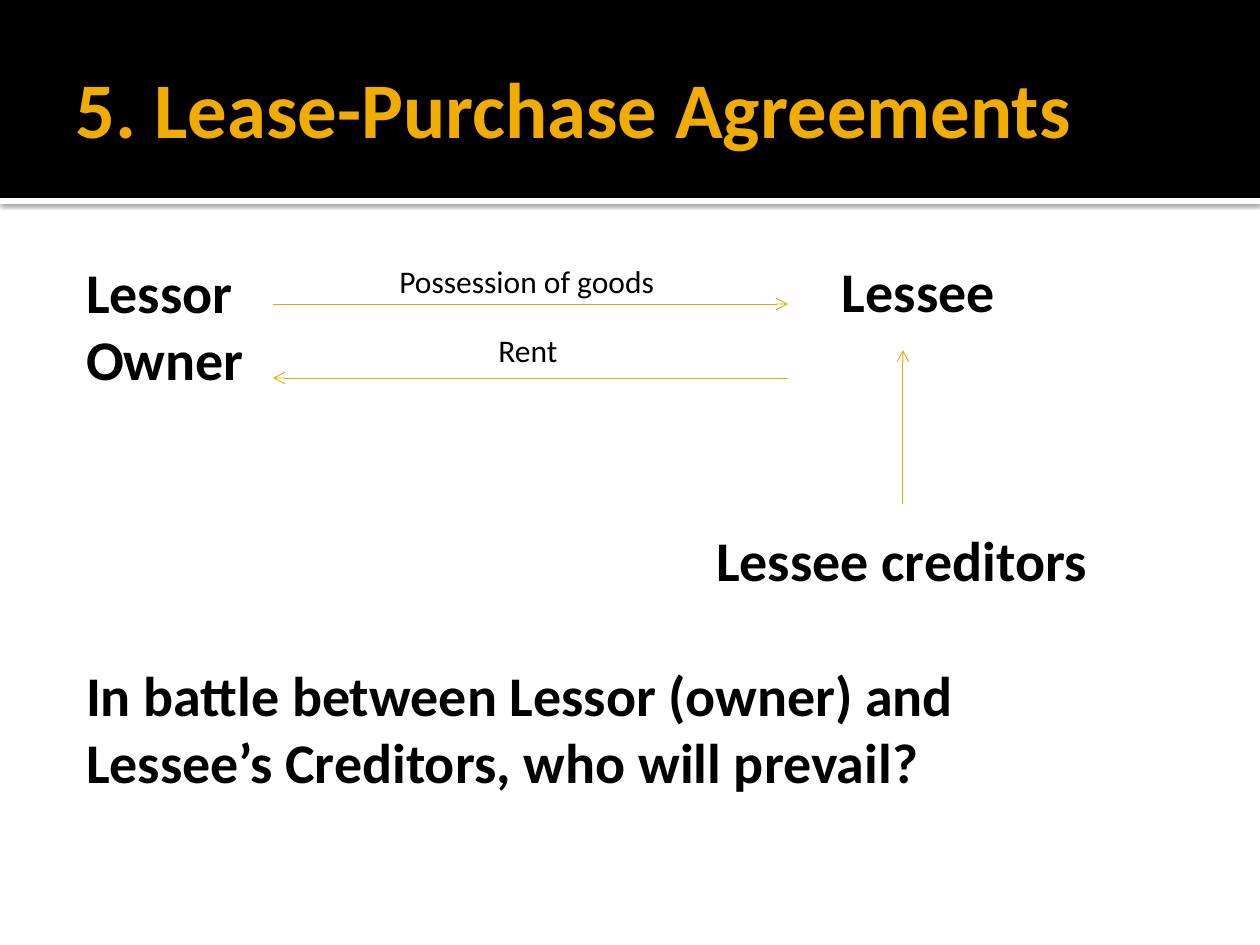
from dataclasses import dataclass

from lxml.etree import SubElement
from pptx import Presentation
from pptx.dml.color import RGBColor
from pptx.enum.shapes import MSO_CONNECTOR, MSO_SHAPE
from pptx.enum.text import MSO_ANCHOR, MSO_AUTO_SIZE, PP_ALIGN
from pptx.oxml import parse_xml
from pptx.oxml.ns import nsdecls, qn
from pptx.util import Pt

PX = 914400 // 126


@dataclass(frozen=True)
class Theme:
    font: str = "Calibri"
    black: RGBColor = RGBColor(0, 0, 0)
    white: RGBColor = RGBColor(255, 255, 255)
    gold: RGBColor = RGBColor(0xF0, 0xAD, 0x00)
    arrow: RGBColor = RGBColor(0xEB, 0xA9, 0x00)
    title_size: int = 45
    body_size: int = 32
    label_size: int = 18
    body_line: float = 38.4


theme = Theme()


def place(shape, left, top, width, height):
    sides = {"left": left, "top": top, "width": width, "height": height}
    for name, value in sides.items():
        setattr(shape, name, value * PX)


def write(para, text, size, color, bold):
    span = para.add_run()
    span.text = text
    span.font.color.rgb = color
    formats = {"name": theme.font, "size": Pt(size), "bold": bold}
    for name, value in formats.items():
        setattr(span.font, name, value)


deck = Presentation()
deck.slide_width, deck.slide_height = 1260 * PX, 945 * PX
page = deck.slides.add_slide(deck.slide_layouts[1])
title, body = page.shapes.title, page.placeholders[1]

# Header bands, behind the placeholders
bands = [(198, 6, theme.white), (0, 198, theme.black)]
for order, (top, height, color) in enumerate(bands):
    band = page.shapes.add_shape(MSO_SHAPE.RECTANGLE, 0, top * PX, 1260 * PX, height * PX)
    band.shadow.inherit = False
    band.fill.solid()
    band.fill.fore_color.rgb = color
    band.line.fill.background()
    band.element.getparent().insert(2 + order, band.element)
    if color == theme.white:
        properties = band.element.spPr
        properties.remove(properties.find(qn("a:effectLst")))
        properties.append(parse_xml(
            f'<a:effectLst {nsdecls("a")}>'
            '<a:outerShdw blurRad="31750" dist="10160" dir="5400000" rotWithShape="0">'
            '<a:srgbClr val="000000"><a:alpha val="60000"/></a:srgbClr>'
            "</a:outerShdw></a:effectLst>"))

# Title, body and lessee frames
lessee = page.shapes.add_textbox(0, 0, PX, PX)
frames = [
    (title, (63, 21, 1134, 173), MSO_ANCHOR.MIDDLE, (13, 6, 6, 6)),
    (body, (63, 244, 1134, 638), MSO_ANCHOR.TOP, (23, 13, 13, 6)),
    (lessee, (819, 244, 252, 86), MSO_ANCHOR.TOP, (23, 13, 13, 6)),
]
for box, sides, anchor, (left, top, right, bottom) in frames:
    place(box, *sides)
    formats = {
        "word_wrap": True, "auto_size": MSO_AUTO_SIZE.NONE, "vertical_anchor": anchor,
        "margin_left": left * PX, "margin_top": top * PX,
        "margin_right": right * PX, "margin_bottom": bottom * PX,
    }
    for name, value in formats.items():
        setattr(box.text_frame, name, value)

heading = title.text_frame.paragraphs[0]
heading.alignment = PP_ALIGN.LEFT
write(heading, "5. Lease-Purchase Agreements", theme.title_size, theme.gold, True)

# Bold lines: box, text, indent in px, empty lines above
lines = [
    (body, "Lessor", 0, 0),
    (lessee, "Lessee", 0, 0),
    (body, "Owner", 0, 0),
    (body, "Lessee creditors", 630, 2),
    (body, "In battle between Lessor (owner) and", 0, 1),
    (body, "Lessee’s Creditors, who will prevail?", 0, 0),
]
for box, text, indent, gap in lines:
    frame = box.text_frame
    para = frame.add_paragraph() if frame.text else frame.paragraphs[0]
    para.line_spacing = Pt(theme.body_line)
    para.space_before = Pt(gap * theme.body_line)
    para.space_after = Pt(0)
    write(para, text, theme.body_size, theme.black, True)
    settings = para._p.get_or_add_pPr()
    settings.set("marL", str(indent * PX))
    settings.set("indent", "0")
    SubElement(settings, qn("a:buNone"))

# Flows between the parties
arrows = [(273, 304, 788, 304), (788, 378, 273, 378), (903, 504, 903, 350)]
for ends in arrows:
    arrow = page.shapes.add_connector(MSO_CONNECTOR.STRAIGHT, *(end * PX for end in ends))
    arrow.line.color.rgb = theme.arrow
    arrow.line.width = Pt(0.5)
    SubElement(arrow.line._get_or_add_ln(), qn("a:tailEnd"), type="arrow")
    SubElement(arrow.element.spPr, qn("a:effectLst"))

labels = [("Possession of goods", 387, 256, 289), ("Rent", 486, 325, 87)]
for text, left, top, width in labels:
    box = page.shapes.add_textbox(left * PX, top * PX, width * PX, 50 * PX)
    box.text_frame.word_wrap = False
    box.text_frame.auto_size = MSO_AUTO_SIZE.SHAPE_TO_FIT_TEXT
    write(box.text_frame.paragraphs[0], text, theme.label_size, theme.black, False)

deck.save("out.pptx")
